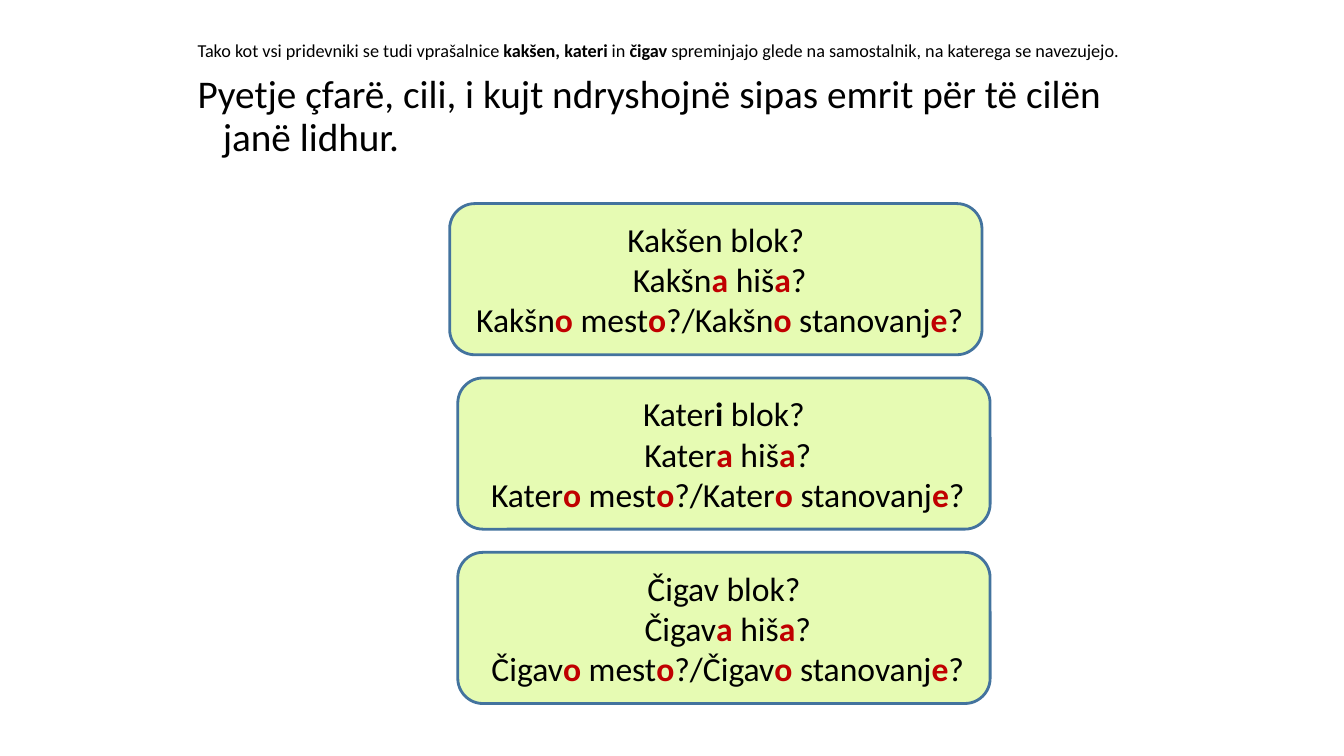
from dataclasses import dataclass

from lxml import etree
from pptx import Presentation
from pptx.dml.color import RGBColor
from pptx.enum.shapes import MSO_SHAPE
from pptx.enum.text import MSO_ANCHOR, MSO_AUTO_SIZE, PP_ALIGN
from pptx.oxml.ns import qn
from pptx.util import Inches, Pt

ROUNDED = MSO_SHAPE.ROUNDED_RECTANGLE
TOP, MIDDLE = MSO_ANCHOR.TOP, MSO_ANCHOR.MIDDLE
LEFT, CENTER = PP_ALIGN.LEFT, PP_ALIGN.CENTER

# Content: text between asterisks is emphasised
INTRO_SLOVENE = (
    "Tako kot vsi pridevniki se tudi vprašalnice *kakšen, kateri *in *čigav*"
    " spreminjajo glede na samostalnik, na katerega se navezujejo."
)
INTRO_ALBANIAN = (
    "Pyetje çfarë, cili, i kujt ndryshojnë sipas emrit për të cilën janë lidhur."
)
# Masculine question, stem of the other genders, left edge in inches
QUESTIONS = [
    ("Kakšen blok?", "Kakšn", 4.46),
    ("Kater*i* blok?", "Kater", 4.54),
    ("Čigav blok?", "Čigav", 4.54),
]
FEMININE = " {0}*a* hiš*a*?"
NEUTER = " {0}*o* mest*o*?/{0}*o* stanovanj*e*?"

# Layout in inches
SLIDE_WIDTH, SLIDE_HEIGHT = 13.33, 7.5
INTRO_AREA = (1.86, 0.36, 9.53, 1.65)
HANGING_INDENT = 0.25
BOX_TOP, BOX_WIDTH, BOX_HEIGHT, BOX_STEP = 2.02, 5.28, 1.5, 1.73


@dataclass(frozen=True)
class Theme:
    font: str = "Calibri"
    text: RGBColor = RGBColor(0x00, 0x00, 0x00)
    ending: RGBColor = RGBColor(0xC0, 0x00, 0x00)
    box_fill: RGBColor = RGBColor(0xE6, 0xFB, 0xB3)
    box_line: RGBColor = RGBColor(0x43, 0x73, 0x9E)
    note_size: int = 13
    intro_size: int = 28
    question_size: int = 24
    line_width: int = 2


THEME = Theme()


def write(paragraph, text, size, emphasis=THEME.text, align=LEFT):
    """Write text in a paragraph, with the parts between asterisks in bold."""
    paragraph.alignment = align
    for index, part in enumerate(text.split("*")):
        if not part:
            continue
        bold = index % 2 == 1
        run = paragraph.add_run()
        run.text = part
        run.font.name = THEME.font
        run.font.size = Pt(size)
        run.font.bold = bold
        run.font.color.rgb = emphasis if bold else THEME.text


def hang(paragraph):
    """Give a paragraph a hanging indent without a bullet."""
    paragraph.line_spacing = 0.9
    paragraph.space_before = Pt(10)
    properties = paragraph._p.get_or_add_pPr()
    properties.set("marL", str(Inches(HANGING_INDENT)))
    properties.set("indent", str(-Inches(HANGING_INDENT)))
    etree.SubElement(properties, qn("a:buNone"))


def add_intro(slide):
    body = slide.placeholders[1]
    body.left, body.top, body.width, body.height = map(Inches, INTRO_AREA)
    frame = body.text_frame
    frame.auto_size = MSO_AUTO_SIZE.NONE
    frame.word_wrap = True
    frame.vertical_anchor = TOP
    for paragraph, text, size in (
        (frame.paragraphs[0], INTRO_SLOVENE, THEME.note_size),
        (frame.add_paragraph(), INTRO_ALBANIAN, THEME.intro_size),
    ):
        write(paragraph, text, size)
        hang(paragraph)


def add_question_box(slide, row, masculine, stem, left):
    box = slide.shapes.add_shape(
        ROUNDED, Inches(left), Inches(BOX_TOP + row * BOX_STEP),
        Inches(BOX_WIDTH), Inches(BOX_HEIGHT),
    )
    box.shadow.inherit = False
    box.fill.solid()
    box.fill.fore_color.rgb = THEME.box_fill
    box.line.color.rgb = THEME.box_line
    box.line.width = Pt(THEME.line_width)
    frame = box.text_frame
    frame.word_wrap = True
    frame.vertical_anchor = MIDDLE
    size = THEME.question_size
    write(frame.paragraphs[0], masculine, size, align=CENTER)
    for pattern in (FEMININE, NEUTER):
        write(frame.add_paragraph(), pattern.format(stem), size,
              emphasis=THEME.ending, align=CENTER)


def main():
    presentation = Presentation()
    presentation.slide_width = Inches(SLIDE_WIDTH)
    presentation.slide_height = Inches(SLIDE_HEIGHT)
    slide = presentation.slides.add_slide(presentation.slide_layouts[1])

    # The slide has no title
    title = slide.shapes.title.element
    title.getparent().remove(title)

    add_intro(slide)
    for row, question in enumerate(QUESTIONS):
        add_question_box(slide, row, *question)
    presentation.save("out.pptx")


if __name__ == "__main__":
    main()
